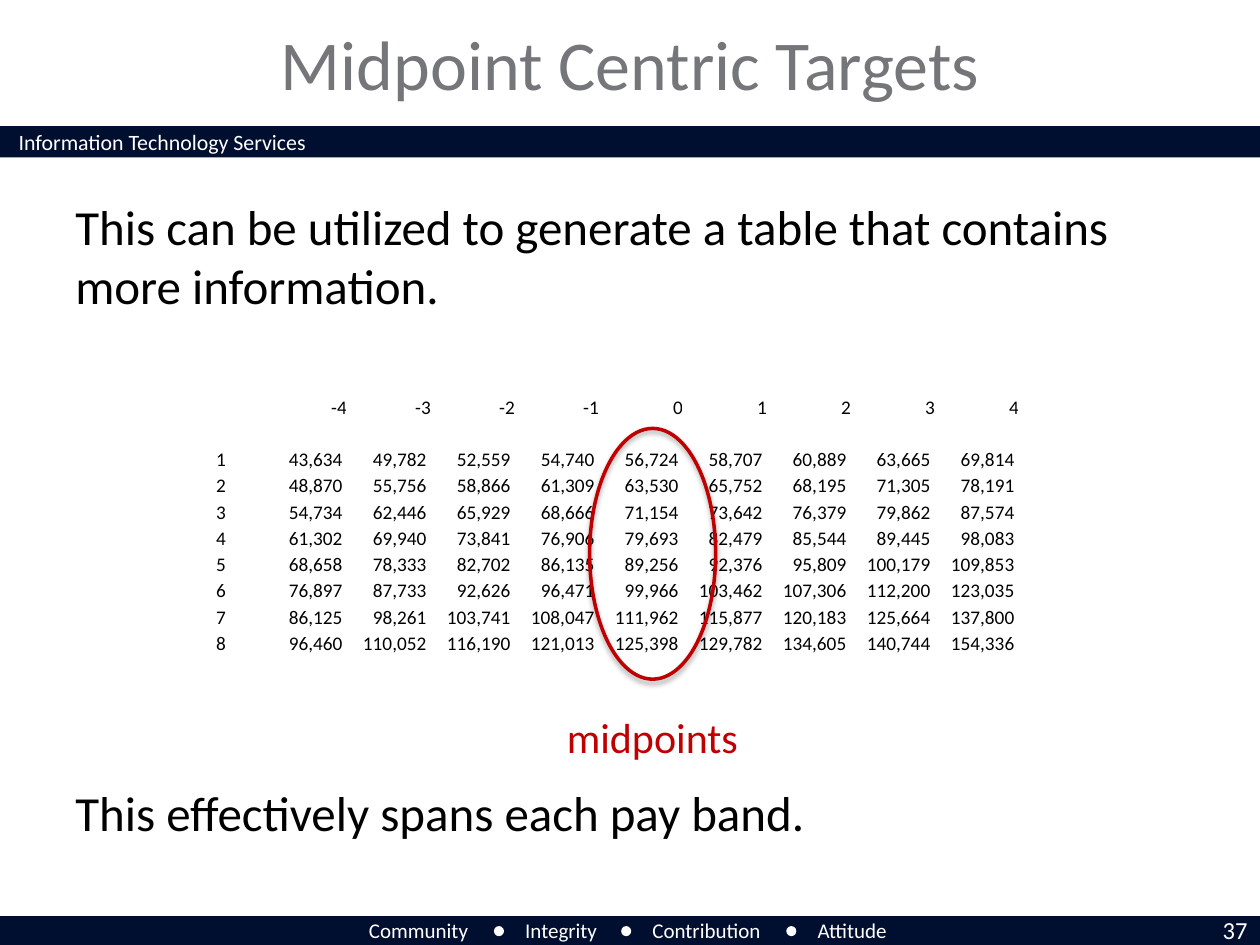
from dataclasses import dataclass

from lxml.etree import SubElement
from pptx import Presentation
from pptx.dml.color import RGBColor
from pptx.enum.shapes import MSO_SHAPE as Shape
from pptx.enum.text import MSO_ANCHOR as Anchor, MSO_AUTO_SIZE as AutoSize, PP_ALIGN as Align
from pptx.oxml.ns import qn
from pptx.util import Pt


@dataclass(frozen=True)
class Theme:
    """Colours, font and type sizes of the slide."""
    font: str = "Calibri"
    navy: str = "000E2F"
    white: str = "FFFFFF"
    grey: str = "747679"
    black: str = "000000"
    red: str = "C00000"
    title: float = 40
    body: float = 28
    label: float = 24
    number: float = 14
    banner: float = 12.5
    footer: float = 12
    cell: float = 11


class SlideBuilder:
    """Holds the theme and the current slide, and adds elements to it."""

    def __init__(self, slide, theme):
        """Keep the slide and its theme."""
        self.slide = slide
        self.theme = theme

    def apply(self, target, formats):
        """Set each attribute named in formats on the target."""
        for name, value in formats.items():
            setattr(target, name, value)

    def add_text(self, paragraph, text, size, color, **formats):
        """Put one styled run into a paragraph."""
        self.apply(paragraph, formats)
        run = paragraph.add_run()
        run.text = text
        self.apply(run.font, {"name": self.theme.font, "size": Pt(size)})
        run.font.color.rgb = RGBColor.from_string(color)

    def title(self, text, box):
        """Move, fill and format the title placeholder."""
        shape = self.slide.shapes.title
        self.apply(shape, dict(zip(("left", "top", "width", "height"), map(Pt, box))))
        self.apply(shape.text_frame, {"auto_size": AutoSize.NONE, "vertical_anchor": Anchor.MIDDLE})
        self.add_text(shape.text_frame.paragraphs[0], text, self.theme.title,
                      self.theme.grey, alignment=Align.CENTER)

    def text(self, lines, box, size, color, wrap=True, gap=0, align=Align.LEFT):
        """Add a text box with one paragraph per line, a gap apart."""
        frame = self.slide.shapes.add_textbox(*map(Pt, box)).text_frame
        self.apply(frame, {"word_wrap": wrap, "vertical_anchor": Anchor.TOP})
        for index, line in enumerate(lines):
            paragraph = frame.add_paragraph() if index else frame.paragraphs[0]
            self.add_text(paragraph, line, size, color, alignment=align,
                          space_before=Pt(gap if index else 0))

    def solid(self, kind, box, color):
        """Add a filled shape without outline."""
        shape = self.slide.shapes.add_shape(kind, *map(Pt, box))
        shape.shadow.inherit = False
        shape.fill.solid()
        shape.fill.fore_color.rgb = RGBColor.from_string(color)
        shape.line.fill.background()

    def ring(self, box, color, width):
        """Add an outlined ellipse with a soft shadow below it."""
        shape = self.slide.shapes.add_shape(Shape.OVAL, *map(Pt, box))
        shape.shadow.inherit = False
        shape.fill.background()
        shape.line.color.rgb = RGBColor.from_string(color)
        shape.line.width = Pt(width)
        effects = shape.element.spPr.find(qn("a:effectLst"))
        shadow = SubElement(effects, qn("a:outerShdw"), blurRad=str(Pt(3.1)),
                            dist=str(Pt(1.8)), dir="5400000", rotWithShape="0")
        shade = SubElement(shadow, qn("a:srgbClr"), val=self.theme.black)
        SubElement(shade, qn("a:alpha"), val="35000")

    def table(self, rows, left, top, column_width, row_height):
        """Add a plain table with centred row labels and right-aligned values."""
        columns = len(rows[0])
        table = self.slide.shapes.add_table(
            len(rows), columns, Pt(left), Pt(top),
            Pt(column_width * columns), Pt(row_height * len(rows))).table
        self.apply(table, {"first_row": False, "horz_banding": False})
        for column in table.columns:
            column.width = Pt(column_width)
        margins = {f"margin_{side}": 0 for side in ("left", "right", "top", "bottom")}
        for row, texts in zip(table.rows, rows):
            row.height = Pt(row_height)
            for index, (cell, text) in enumerate(zip(row.cells, texts)):
                self.apply(cell, {**margins, "vertical_anchor": Anchor.BOTTOM})
                cell.fill.background()
                paragraph = cell.text_frame.paragraphs[0]
                if text:
                    self.add_text(paragraph, text, self.theme.cell, self.theme.black,
                                  alignment=Align.RIGHT if index else Align.CENTER)
                else:
                    SubElement(paragraph._p, qn("a:endParaRPr"), sz=str(self.theme.cell * 100))


PAY_BANDS = [
    (43634, 49782, 52559, 54740, 56724, 58707, 60889, 63665, 69814),
    (48870, 55756, 58866, 61309, 63530, 65752, 68195, 71305, 78191),
    (54734, 62446, 65929, 68666, 71154, 73642, 76379, 79862, 87574),
    (61302, 69940, 73841, 76906, 79693, 82479, 85544, 89445, 98083),
    (68658, 78333, 82702, 86135, 89256, 92376, 95809, 100179, 109853),
    (76897, 87733, 92626, 96471, 99966, 103462, 107306, 112200, 123035),
    (86125, 98261, 103741, 108047, 111962, 115877, 120183, 125664, 137800),
    (96460, 110052, 116190, 121013, 125398, 129782, 134605, 140744, 154336),
]
VALUES = [("Community", 203.76, 72), ("Integrity", 293.04, 57.6),
          ("Contribution", 365.76, 79.2), ("Attitude", 460.08, 56.16)]


def main():
    """Build the slide and save it."""
    presentation = Presentation()
    presentation.slide_width, presentation.slide_height = Pt(720), Pt(540)
    theme = Theme()
    builder = SlideBuilder(presentation.slides.add_slide(presentation.slide_layouts[5]), theme)

    for top in (72, 523.44):
        builder.solid(Shape.RECTANGLE, (0, top, 720, 18), theme.navy)
    builder.text(["Information Technology Services"], (3.6, 69.84, 244.8, 23.04),
                 theme.banner, theme.white)
    for index, (value, left, width) in enumerate(VALUES):
        builder.text([value], (left, 520.56, width, 21.6), theme.footer, theme.white, wrap=False)
        if index:
            builder.solid(Shape.OVAL, (left - 10.8, 529.2, 5.76, 5.76), theme.white)
    builder.text(["37"], (665.28, 519.12, 54.72, 24.48), theme.number, theme.white,
                 align=Align.RIGHT)

    builder.title("Midpoint Centric Targets", (72, 7.2, 576, 57.6))
    builder.text(["This can be utilized to generate a table that contains more information.",
                  "This effectively spans each pay band."],
                 (36, 109, 648, 396), theme.body, theme.black, gap=267.5)

    header = ["", *(str(step) for step in range(-4, 5))]
    bands = [[str(band), *(f"{pay:,} " for pay in pays)]
             for band, pays in enumerate(PAY_BANDS, 1)]
    builder.table([header, [""] * len(header), *bands], 102.24, 224.64, 48, 15)
    builder.ring((336.96, 244.8, 72, 143.28), theme.red, 2)
    builder.text(["midpoints"], (316.8, 403.2, 113.04, 36), theme.label, theme.red, wrap=False)
    presentation.save("out.pptx")


if __name__ == "__main__":
    main()
